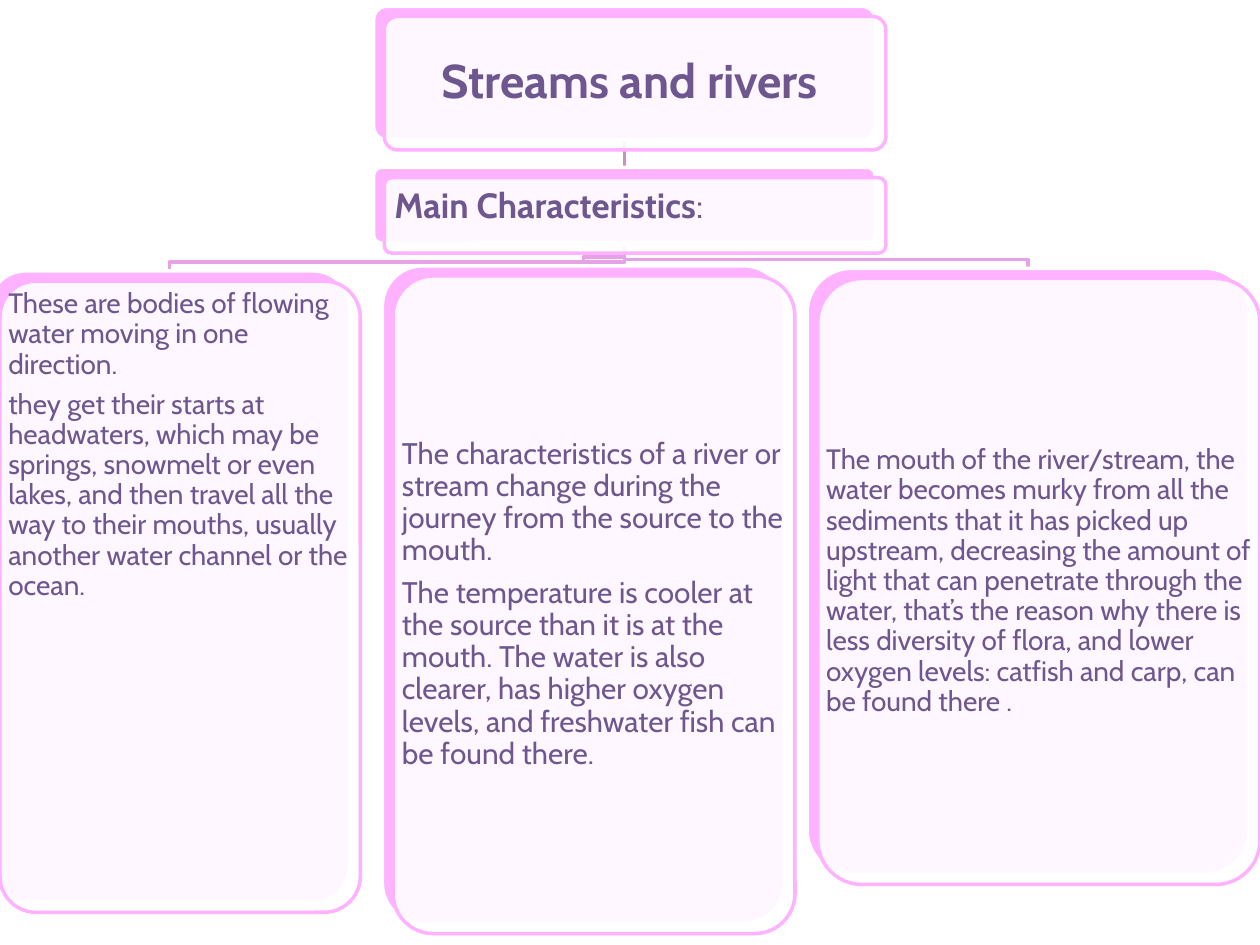
from lxml.etree import SubElement
from pptx import Presentation
from pptx.dml.color import RGBColor
from pptx.enum.shapes import MSO_CONNECTOR, MSO_SHAPE
from pptx.enum.text import MSO_ANCHOR, PP_ALIGN
from pptx.oxml.ns import qn
from pptx.util import Pt

COLORS = {"pink": "FEB2FF", "white": "FFFFFF", "text": "6E578F",
          "trunk": "CB8FCC", "branch": "E7A2E7"}
FONT = "Cabin"
SHIFT_X, SHIFT_Y = 6.1, 5.8
ELBOW = 5

TITLE = {"box": (219.6, 9.4, 286.6, 76.3), "size": 27, "inset": 8,
         "anchor": MSO_ANCHOR.MIDDLE, "align": PP_ALIGN.CENTER,
         "text": [[("Streams and rivers ", True)]]}
HEADING = {"box": (219.6, 101.5, 286.6, 43.2), "size": 20, "inset": 5.8,
           "anchor": MSO_ANCHOR.TOP, "align": PP_ALIGN.LEFT,
           "text": [[("Main Characteristics", True), (":", False)]]}
COLUMNS = [
    {"box": (0, 160.6, 205.9, 360.7), "size": 16, "inset": 4.8,
     "anchor": MSO_ANCHOR.TOP, "align": PP_ALIGN.LEFT,
     "text": [
         [("These are bodies of flowing water moving in one direction.", False)],
         [("they get their starts at headwaters, which may be springs, "
           "snowmelt or even lakes, and then travel all the way to their "
           "mouths, usually another water channel or the ocean.", False)]]},
    {"box": (224.6, 157.7, 229.7, 375.8), "size": 17, "inset": 5.1,
     "anchor": MSO_ANCHOR.MIDDLE, "align": PP_ALIGN.LEFT,
     "text": [
         [("The characteristics of a river or stream change during the "
           "journey from the source to the mouth.", False)],
         [("The temperature is cooler at the source than it is at the mouth. "
           "The water is also clearer, has higher oxygen levels, and "
           "freshwater fish can be found there.", False)]]},
    {"box": (467.3, 159.1, 252.7, 346.3), "size": 16, "inset": 4.8,
     "anchor": MSO_ANCHOR.MIDDLE, "align": PP_ALIGN.LEFT,
     "text": [
         [("The mouth of the river/stream, the water becomes murky from all "
           "the sediments that it has picked up upstream, decreasing the "
           "amount of light that can penetrate through the water, that’s the "
           "reason why there is less diversity of flora, and lower oxygen "
           "levels: catfish and carp, can be found there .", False)]]},
]


def rgb(name):
    return RGBColor.from_string(COLORS[name])


def set_line(sp, color):
    sp.line.color.rgb = rgb(color)
    sp.line.width = Pt(2)


def back_box(node):
    x, y, w, h = node["box"]
    return x - SHIFT_X, y - SHIFT_Y, w, h


def add_branch(s, parent, child):
    px, py, pw, ph = back_box(parent)
    cx, cy, cw, _ = back_box(child)
    start_x, end_x = px + pw / 2, cx + cw / 2
    points = [(start_x, cy - ELBOW), (end_x, cy - ELBOW), (end_x, cy)]
    fb = s.shapes.build_freeform(Pt(start_x), Pt(py + ph))
    fb.add_line_segments([(Pt(x), Pt(y)) for x, y in points], close=False)
    sp = fb.convert_to_shape()
    sp.shadow.inherit = False
    sp.fill.background()
    set_line(sp, "branch")


def add_card(s, box, fill, line):
    sp = s.shapes.add_shape(MSO_SHAPE.ROUNDED_RECTANGLE, *map(Pt, box))
    sp.adjustments[0] = 0.1
    sp.shadow.inherit = False
    sp.fill.solid()
    sp.fill.fore_color.rgb = rgb(fill)
    set_line(sp, line)
    return sp


def add_text(s, node):
    tf = s.shapes.add_textbox(*map(Pt, node["box"])).text_frame
    tf.word_wrap = True
    tf.vertical_anchor = node["anchor"]
    tf.margin_left = tf.margin_right = Pt(node["inset"])
    tf.margin_top = tf.margin_bottom = Pt(node["inset"])
    for i, runs in enumerate(node["text"]):
        p = tf.add_paragraph() if i else tf.paragraphs[0]
        p.alignment = node["align"]
        p.line_spacing = 0.9
        p.space_after = Pt(0.35 * node["size"])
        for text, bold in runs:
            r = p.add_run()
            r.text = text
            r.font.name = FONT
            r.font.size = Pt(node["size"])
            r.font.bold = bold
            r.font.color.rgb = rgb("text")


def add_node(s, node):
    back = add_card(s, back_box(node), "pink", "white")
    front = add_card(s, node["box"], "white", "pink")
    color = front.fill._xPr.find(qn("a:solidFill"))[0]
    SubElement(color, qn("a:alpha")).set("val", "90000")
    add_text(s, node)
    return back


def main():
    prs = Presentation()
    prs.slide_width, prs.slide_height = Pt(720), Pt(540)
    s = prs.slides.add_slide(prs.slide_layouts[6])

    for column in reversed(COLUMNS):
        add_branch(s, HEADING, column)
    trunk = s.shapes.add_connector(MSO_CONNECTOR.STRAIGHT, 0, 0, 0, 0)
    set_line(trunk, "trunk")
    SubElement(trunk._element.spPr, qn("a:effectLst"))

    title, heading, *_ = [add_node(s, n) for n in (TITLE, HEADING, *COLUMNS)]
    trunk.begin_connect(title, 2)
    trunk.end_connect(heading, 0)

    prs.save("out.pptx")


if __name__ == "__main__":
    main()
